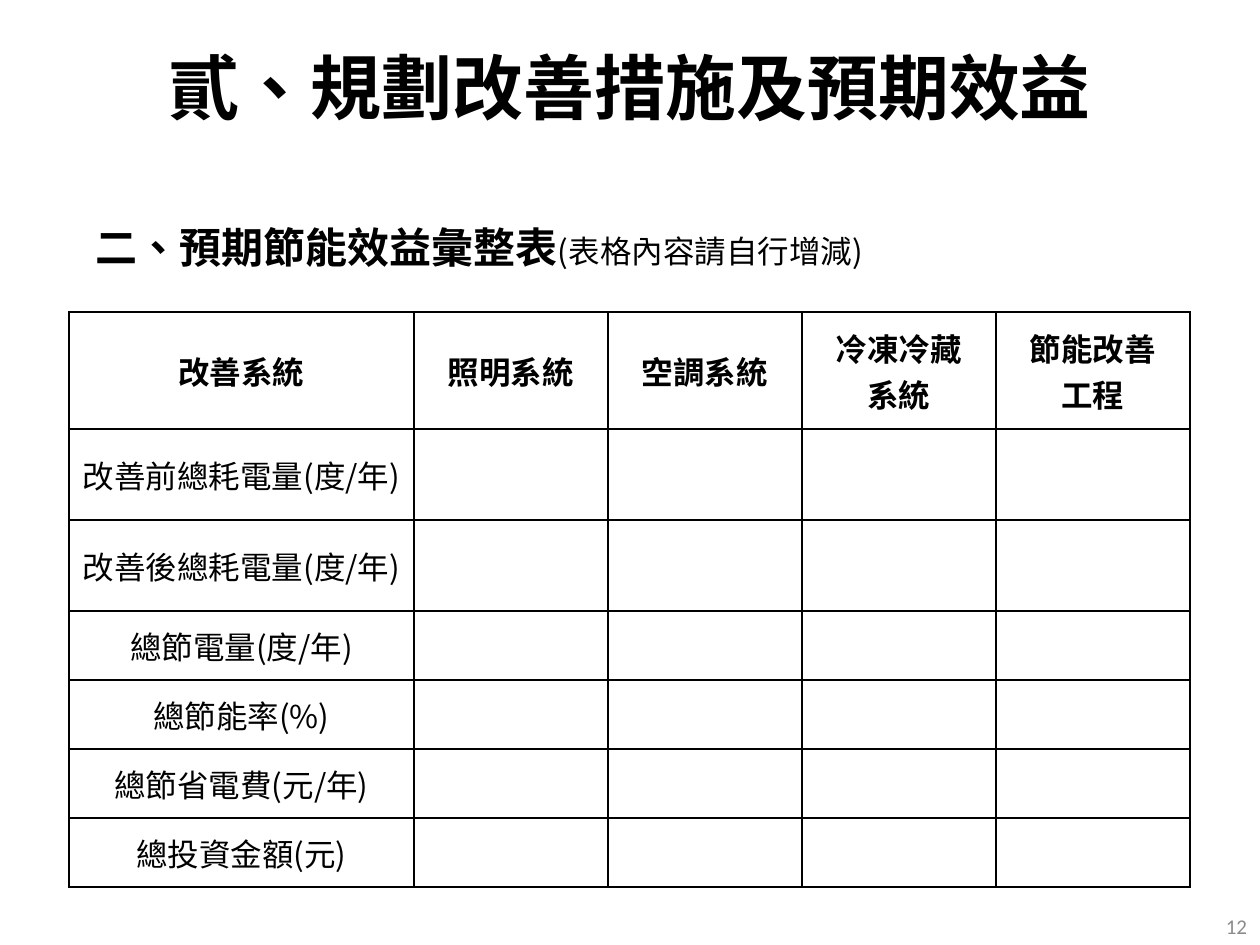
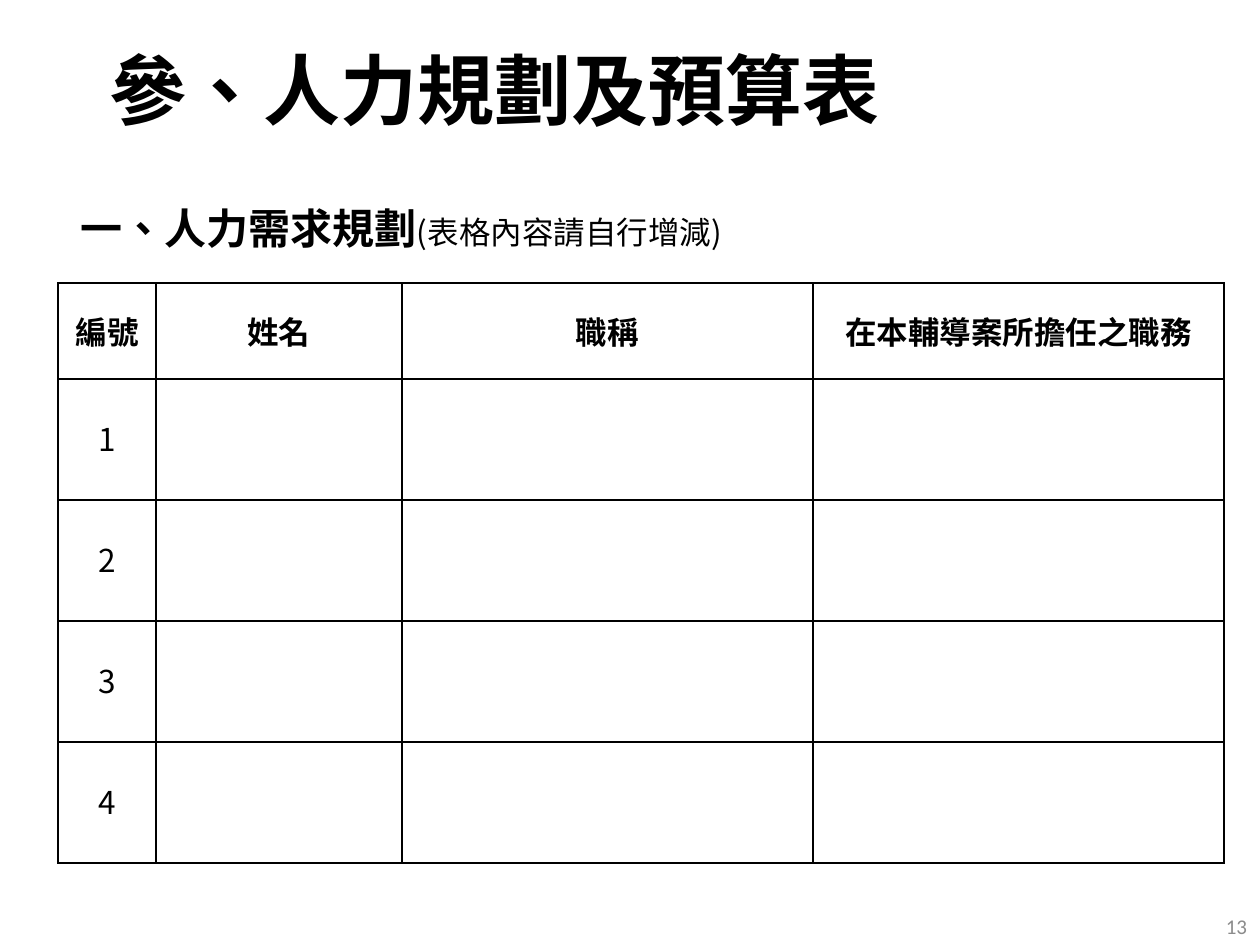
from lxml.etree import SubElement
from pptx import Presentation
from pptx.dml.color import RGBColor
from pptx.enum.text import MSO_ANCHOR as Anchor, PP_ALIGN as Align
from pptx.oxml.ns import qn
from pptx.util import Pt

EMU_PER_PX = 914400 / 126
CJK_FONT = "Noto Sans CJK SC"
NUMBER_FONT = "Calibri"
BLACK, GREY = "000000", "8C8C8C"
TABLE_HINT = "(表格內容請自行增減)"


def px(length):
    return round(length * EMU_PER_PX)


def color(hex_code):
    return RGBColor.from_string(hex_code)


def add_run(paragraph, text, size=18, bold=False, font=CJK_FONT, ink=BLACK):
    run = paragraph.add_run()
    run.text = text
    run.font.size = Pt(size)
    run.font.bold = bold
    run.font.name = font
    run.font.color.rgb = color(ink)
    properties = run._r.get_or_add_rPr()
    properties.set("lang", "zh-TW")
    SubElement(properties, qn("a:ea"), typeface=font)


def space(paragraph, align, line=None, before=None, after=None):
    paragraph.alignment = align
    paragraph.line_spacing = line
    paragraph.space_before = before
    paragraph.space_after = after


def draw_borders(cell):
    properties = cell._tc.get_or_add_tcPr()
    for side in ("lnL", "lnR", "lnT", "lnB"):
        line = SubElement(properties, qn(f"a:{side}"), w=str(Pt(1)))
        fill = SubElement(line, qn("a:solidFill"))
        SubElement(fill, qn("a:srgbClr"), val=BLACK)


class Deck:
    def __init__(self):
        self.presentation = Presentation()
        self.presentation.slide_width = px(1260)
        self.presentation.slide_height = px(945)
        self.slide = None

    def new_slide(self, page):
        blank = self.presentation.slide_layouts[6]
        self.slide = self.presentation.slides.add_slide(blank)
        number = self.text_box(976, 907, 284, 38, 13, 6, Anchor.MIDDLE)
        space(number, Align.RIGHT)
        add_run(number, str(page), size=12, font=NUMBER_FONT, ink=GREY)

    def text_box(self, left, top, width, height, inset_x=9, inset_y=5, anchor=Anchor.TOP):
        box = self.slide.shapes.add_textbox(px(left), px(top), px(width), px(height))
        frame = box.text_frame
        frame.word_wrap = True
        frame.vertical_anchor = anchor
        frame.margin_left = frame.margin_right = px(inset_x)
        frame.margin_top = frame.margin_bottom = px(inset_y)
        return frame.paragraphs[0]

    def title(self, text, left, top, size, align):
        heading = self.text_box(left, top, 1086, 183, anchor=Anchor.MIDDLE)
        space(heading, align, line=0.9)
        add_run(heading, text, size=size, bold=True)

    def section(self, text, left, top):
        heading = self.text_box(left, top, 1086, 600)
        space(heading, Align.LEFT, line=1.5, before=Pt(10))
        add_run(heading, text, size=24, bold=True)
        add_run(heading, TABLE_HINT)

    def form_table(self, left, top, widths, heights, headers, labels, **label_spacing):
        frame = self.slide.shapes.add_table(
            len(heights), len(widths), px(left), px(top), px(sum(widths)), px(sum(heights)))
        table = frame.table
        table.first_row = table.horz_banding = False
        for column, width in zip(table.columns, widths):
            column.width = px(width)
        for row, height in zip(table.rows, heights):
            row.height = px(height)
        for cell in table.iter_cells():
            draw_borders(cell)
            cell.fill.background()
            cell.vertical_anchor = Anchor.MIDDLE
            cell.margin_left = cell.margin_right = px(9)
            cell.margin_top = cell.margin_bottom = 0
        for column, header in enumerate(headers):
            self.cell_text(table.cell(0, column), header, True)
        for row, label in enumerate(labels, 1):
            self.cell_text(table.cell(row, 0), label, False, **label_spacing)

    def cell_text(self, cell, text, bold, **spacing):
        frame = cell.text_frame
        for index, line in enumerate(text.split("\n")):
            paragraph = frame.add_paragraph() if index else frame.paragraphs[0]
            space(paragraph, Align.CENTER, **spacing)
            add_run(paragraph, line, bold=bold)


def main():
    deck = Deck()

    deck.new_slide(12)
    deck.title("貳、規劃改善措施及預期效益", 87, 0, 40.5, Align.CENTER)
    deck.section("二、預期節能效益彙整表", 87, 191)
    systems = ["改善系統", "照明系統", "空調系統", "冷凍冷藏\n系統", "節能改善\n工程"]
    usage_totals = ["改善前總耗電量(度/年)", "改善後總耗電量(度/年)"]
    savings = ["總節電量(度/年)", "總節能率(%)", "總節省電費(元/年)", "總投資金額(元)"]
    row_heights = [117] + [91] * len(usage_totals) + [69] * len(savings)
    deck.form_table(69, 312, [345] + [194] * 4, row_heights,
                    systems, usage_totals + savings)

    deck.new_slide(13)
    deck.title("參、人力規劃及預算表", 101, 3, 44, Align.LEFT)
    deck.section("一、人力需求規劃", 72, 172)
    staff_fields = ["編號", "姓名", "職稱", "在本輔導案所擔任之職務"]
    staff_numbers = ["1", "2", "3", "4"]
    deck.form_table(58, 283, [98, 246, 411, 411], [96] + [121] * len(staff_numbers),
                    staff_fields, staff_numbers,
                    line=Pt(24), before=Pt(2.5), after=Pt(6))

    deck.presentation.save("out.pptx")


if __name__ == "__main__":
    main()
